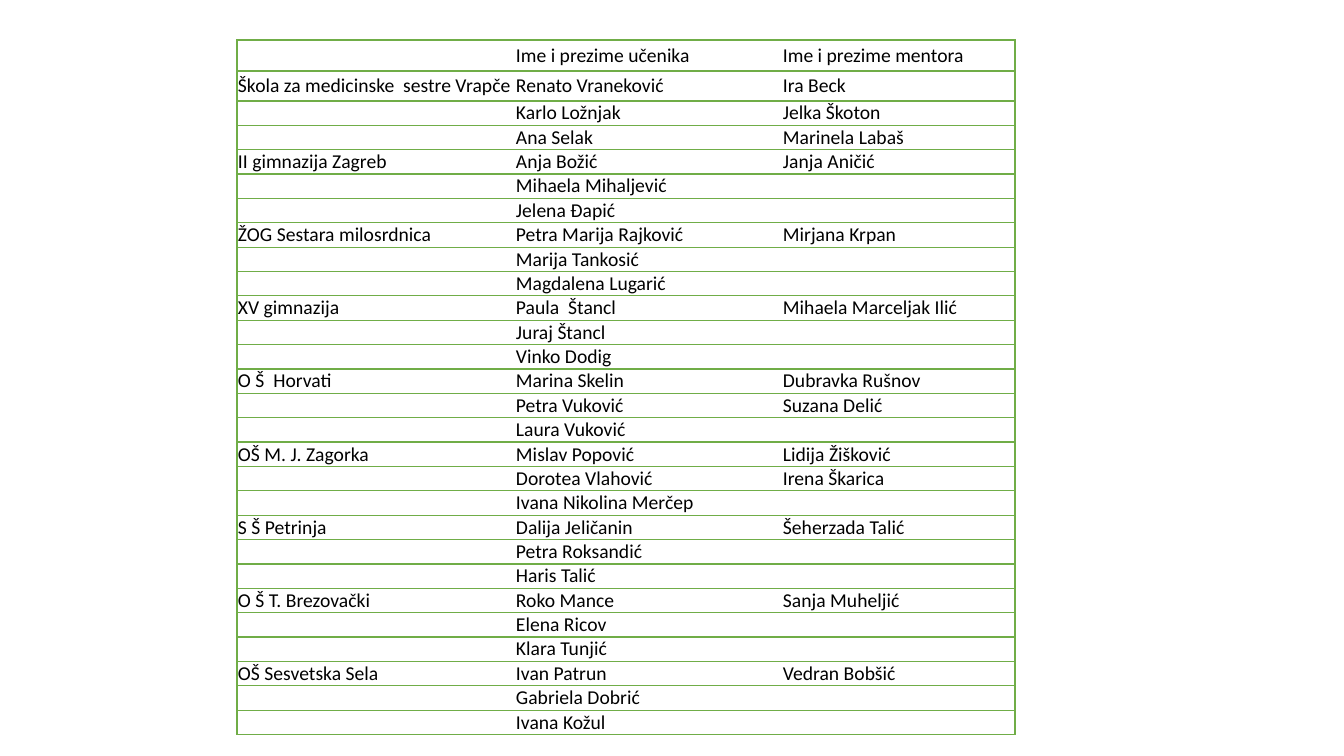
from lxml import etree
from pptx import Presentation
from pptx.dml.color import RGBColor
from pptx.enum.text import MSO_ANCHOR
from pptx.oxml.ns import qn
from pptx.util import Emu, Pt

MIDDLE = MSO_ANCHOR.MIDDLE
EMU_PER_PX = 914400 / 100.8
COLOURS = {"paper": "FFFFFF", "text": "000000", "rule": "70AD47"}
HEADINGS = ("", "Ime i prezime učenika", "Ime i prezime mentora")
COLUMN_WIDTHS = (278, 267, 233)
COLUMN_RULES = ("LTB", "TB", "RTB")
TABLE_HEIGHT = 695
TALL_HEIGHTS = [31, 30]
SCHOOLS = [
    ("Škola za medicinske  sestre Vrapče",
     ("Renato Vraneković", "Karlo Ložnjak", "Ana Selak"),
     ("Ira Beck", "Jelka Škoton", "Marinela Labaš")),
    ("II gimnazija Zagreb",
     ("Anja Božić", "Mihaela Mihaljević", "Jelena Đapić"),
     ("Janja Aničić",)),
    ("ŽOG Sestara milosrdnica",
     ("Petra Marija Rajković", "Marija Tankosić", "Magdalena Lugarić"),
     ("Mirjana Krpan",)),
    ("XV gimnazija",
     ("Paula  Štancl", "Juraj Štancl", "Vinko Dodig"),
     ("Mihaela Marceljak Ilić",)),
    ("O Š  Horvati",
     ("Marina Skelin", "Petra Vuković", "Laura Vuković"),
     ("Dubravka Rušnov", "Suzana Delić")),
    ("OŠ M. J. Zagorka",
     ("Mislav Popović", "Dorotea Vlahović", "Ivana Nikolina Merčep"),
     ("Lidija Žišković", "Irena Škarica")),
    ("S Š Petrinja",
     ("Dalija Jeličanin", "Petra Roksandić", "Haris Talić"),
     ("Šeherzada Talić",)),
    ("O Š T. Brezovački",
     ("Roko Mance", "Elena Ricov", "Klara Tunjić"),
     ("Sanja Muheljić",)),
    ("OŠ Sesvetska Sela",
     ("Ivan Patrun", "Gabriela Dobrić", "Ivana Kožul"),
     ("Vedran Bobšić",)),
]


def px(length):
    """Turn pixels into EMU."""
    return Emu(round(length * EMU_PER_PX))


def participant_rows():
    """List one row per pupil, naming the school on its first row."""
    rows = [HEADINGS]
    for school, pupils, mentors in SCHOOLS:
        for index, pupil in enumerate(pupils):
            mentor = mentors[index] if index < len(mentors) else ""
            rows.append((school if index == 0 else "", pupil, mentor))
    return rows


def row_heights(count):
    """Share the height left by the tall rows equally among the others."""
    others = count - len(TALL_HEIGHTS)
    return TALL_HEIGHTS + [(TABLE_HEIGHT - sum(TALL_HEIGHTS)) / others] * others


class SlideBuilder:
    """Hold the text style and the current slide."""

    def __init__(self, page, font="Calibri", size=14):
        """Remember the page and its text style."""
        self.page = page
        self.font = font
        self.size = size

    def table(self, left, top, widths, heights, rows):
        """Add a ruled table of plain text."""
        frame = self.page.shapes.add_table(
            len(rows), len(widths), px(left), px(top), px(sum(widths)), px(sum(heights)))
        table = frame.table
        table.first_row = False
        table.horz_banding = False
        for column, width in zip(table.columns, widths):
            column.width = px(width)
        for row, height, texts in zip(table.rows, heights, rows):
            row.height = px(height)
            for cell, text, rules in zip(row.cells, texts, COLUMN_RULES):
                self.cell(cell, text, rules)

    def cell(self, cell, text, rules):
        """Fill one cell and rule the sides that are named."""
        cell.margin_left = cell.margin_right = px(1)
        cell.margin_top = cell.margin_bottom = 0
        cell.vertical_anchor = MIDDLE
        self.borders(cell, rules)
        cell.fill.solid()
        cell.fill.fore_color.rgb = RGBColor.from_string(COLOURS["paper"])
        para = cell.text_frame.paragraphs[0]
        para.text = text
        for span in para.runs:
            span.font.name = self.font
            span.font.size = Pt(self.size)
            span.font.color.rgb = RGBColor.from_string(COLOURS["text"])
        if not text:
            etree.SubElement(para._p, qn("a:endParaRPr"), sz=str(self.size * 100))

    def borders(self, cell, rules):
        """Draw the named sides and clear the others."""
        properties = cell._tc.get_or_add_tcPr()
        for side in "LRTB":
            line = etree.SubElement(properties, qn(f"a:ln{side}"), w=str(Pt(1)))
            if side in rules:
                fill = etree.SubElement(line, qn("a:solidFill"))
                etree.SubElement(fill, qn("a:srgbClr"), val=COLOURS["rule"])
            else:
                etree.SubElement(line, qn("a:noFill"))


def main():
    """Build the deck of one page."""
    deck = Presentation()
    deck.slide_width, deck.slide_height = px(1344), px(756)
    builder = SlideBuilder(deck.slides.add_slide(deck.slide_layouts[6]))
    rows = participant_rows()
    builder.table(237, 40, COLUMN_WIDTHS, row_heights(len(rows)), rows)
    deck.save("out.pptx")


if __name__ == "__main__":
    main()
